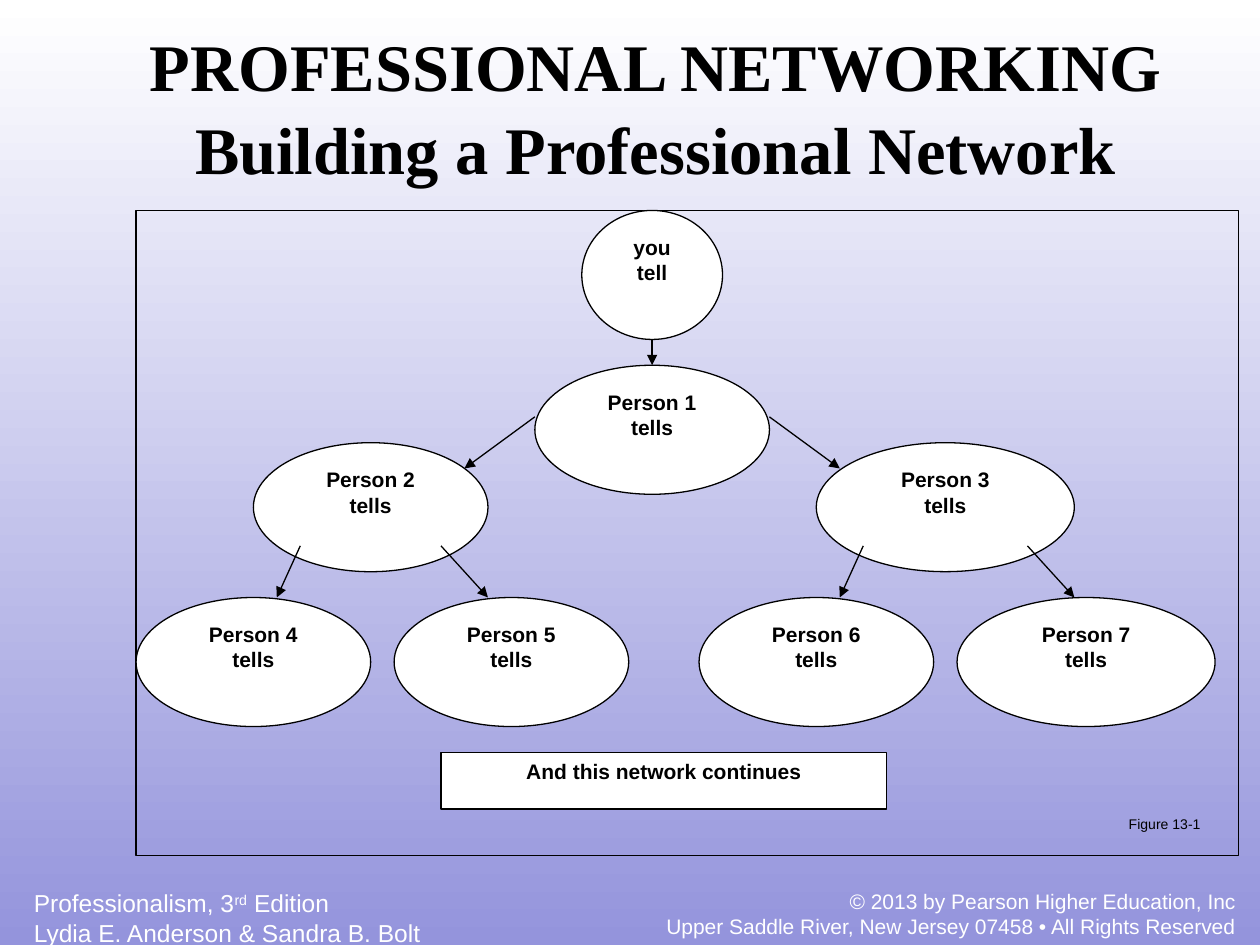
from pptx import Presentation
from pptx.dml.color import RGBColor as RGB
from pptx.enum.shapes import MSO_CONNECTOR as Conn, MSO_SHAPE as Kind
from pptx.enum.text import MSO_ANCHOR as Anchor, PP_ALIGN as Align
from pptx.oxml.ns import qn
from pptx.util import Inches as In, Pt
from lxml.etree import SubElement as Sub

HUES = {k: RGB.from_string(v) for k, v in
        {"ink": "000000", "paper": "FFFFFF", "base": "9494DC"}.items()}

deck = Presentation()
deck.slide_width, deck.slide_height = In(10), In(7.5)
slide = deck.slides.add_slide(deck.slide_layouts[5])
shapes = slide.shapes

# Chart grid: 47 columns by 25 rows inside the frame
LEFT, TOP, WIDE, HIGH = 1.08, 1.67, 8.75, 5.12
COL, ROW = WIDE / 47, HIGH / 25


def write(box, lines, size, hue="ink", bold=False, side=Align.CENTER,
          face="Arial"):
    """Fill a box with paragraphs, each a list of runs; "^" raises a run."""
    frame = box.text_frame
    frame.word_wrap = True
    frame.vertical_anchor = Anchor.TOP
    for i, line in enumerate(lines):
        para = frame.add_paragraph() if i else frame.paragraphs[0]
        para.alignment = side
        for part in line:
            if part == "\n":
                para.add_line_break()
                continue
            run = para.add_run()
            run.text = part.lstrip("^")
            font = run.font
            font.name, font.size, font.bold = face, Pt(size), bold
            font.color.rgb = HUES[hue]
            if part.startswith("^"):
                run._r.get_or_add_rPr().set("baseline", "30000")


def draw(kind, x, y, w, h, fill=True, line=True):
    """Add a shape placed in grid columns and rows."""
    item = shapes.add_shape(kind, In(LEFT + x * COL), In(TOP + y * ROW),
                            In(w * COL), In(h * ROW))
    item.shadow.inherit = False
    if fill:
        item.fill.solid()
        item.fill.fore_color.rgb = HUES["paper"]
    else:
        item.fill.background()
    if line:
        item.line.color.rgb = HUES["ink"]
        item.line.width = Pt(0.75)
    else:
        item.line.fill.background()
    return item


# Background
back = slide.background.fill
back.gradient()
back.gradient_angle = 270
for stop, hue in zip(back.gradient_stops, ("paper", "base")):
    stop.color.rgb = HUES[hue]

# Title
title = shapes.title
title.left, title.top, title.width, title.height = map(
    In, (0.58, 0.17, 9.25, 1.37))
write(title, [["PROFESSIONAL NETWORKING"],
              ["Building a Professional Network"]],
      38, bold=True, face="Times New Roman")
title.text_frame.vertical_anchor = Anchor.BOTTOM
title.text_frame.paragraphs[1].space_before = Pt(1.5)

# Frame
draw(Kind.RECTANGLE, 0, 0, 47, 25, fill=False)

# People: name, verb, column, row, columns wide
for name, verb, x, y, w in (
        ("you", "tell", 19, 0, 6),
        ("Person 1", "tells", 17, 6, 10),
        ("Person 2", "tells", 5, 9, 10),
        ("Person 3", "tells", 29, 9, 11),
        ("Person 4", "tells", 0, 15, 10),
        ("Person 5", "tells", 11, 15, 10),
        ("Person 6", "tells", 24, 15, 10),
        ("Person 7", "tells", 35, 15, 11)):
    draw(Kind.OVAL, x, y, w, 5)
    label = draw(Kind.RECTANGLE, x + 0.22 * w, y + 0.7, 0.56 * w, 3.57,
                 line=False)
    write(label, [[name], [verb]], 12, bold=True)

# Closing box
last = draw(Kind.RECTANGLE, 13, 21, 19, 2.2)
write(last, [["And this network continues"]], 12, bold=True)

# Arrows: start and end in columns and rows
for x1, y1, x2, y2 in (
        (22, 5, 22, 6), (17, 8, 14, 10), (27, 8, 30, 10),
        (7, 13, 6, 15), (13, 13, 15, 15),
        (31, 13, 30, 15), (38, 13, 40, 15)):
    arrow = shapes.add_connector(
        Conn.STRAIGHT, In(LEFT + x1 * COL), In(TOP + y1 * ROW),
        In(LEFT + x2 * COL), In(TOP + y2 * ROW))
    arrow.line.color.rgb = HUES["ink"]
    arrow.line.width = Pt(0.75)
    Sub(arrow.line._get_or_add_ln(), qn("a:tailEnd"), type="triangle")
    Sub(arrow._element.spPr, qn("a:effectLst"))

# Caption and footers
for place, lines, size, hue, side in (
        ((8.86, 6.42, 0.79, 0.24), [["Figure 13-1"]], 8, "ink", Align.LEFT),
        ((0.17, 7, 4.5, 0.57),
         [["Professionalism, 3", "^rd", " Edition"],
          ["Lydia E. Anderson & Sandra B. Bolt"]], 14, "paper", Align.LEFT),
        ((5.05, 7, 4.86, 0.5),
         [["© 2013 by Pearson Higher Education, Inc", "\n",
           "Upper Saddle River, New Jersey 07458 • All Rights Reserved"]],
         12, "paper", Align.RIGHT)):
    write(shapes.add_textbox(*map(In, place)), lines, size, hue, side=side)

deck.save("out.pptx")
